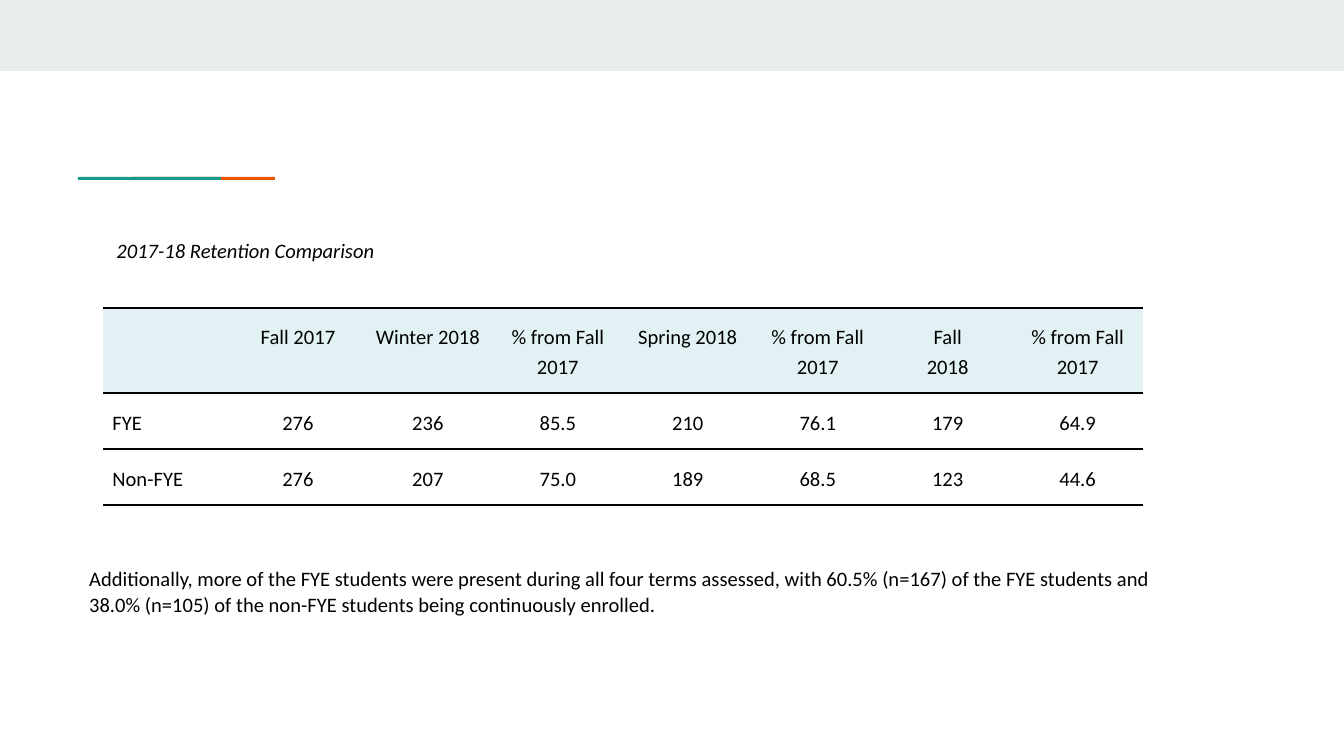
from dataclasses import dataclass

from lxml.etree import SubElement
from pptx import Presentation
from pptx.dml.color import RGBColor
from pptx.enum.shapes import MSO_SHAPE
from pptx.enum.text import MSO_ANCHOR, MSO_AUTO_SIZE, PP_ALIGN
from pptx.oxml import parse_xml
from pptx.oxml.ns import nsdecls, qn
from pptx.util import Inches, Pt

SLIDE_WIDTH, SLIDE_HEIGHT = 1344, 756
EMU_PER_PX = Inches(10) / SLIDE_WIDTH
TITLE_ONLY = 5

HEADERS = ["", "Fall 2017", "Winter 2018", "% from Fall 2017", "Spring 2018",
           "% from Fall 2017", "Fall\n2018", "% from Fall 2017"]
RETENTION = [
    ["FYE", "276", "236", "85.5", "210", "76.1", "179", "64.9"],
    ["Non-FYE", "276", "207", "75.0", "189", "68.5", "123", "44.6"],
]
SUMMARY = ("Additionally, more of the FYE students were present during all four terms "
           "assessed, with 60.5% (n=167) of the FYE students and 38.0% (n=105) of the "
           "non-FYE students being continuously enrolled.")


@dataclass(frozen=True)
class Theme:
    """Colours, font and type sizes of the slide."""

    text: str = "000000"
    band: str = "E9EDEE"
    orange: str = "EB5600"
    green: str = "1A9988"
    header: str = "E2F1F4"
    font: str = "Calibri"
    size: int = 11
    rule: int = 1


def px(length):
    """Turn pixels into EMU."""
    return round(length * EMU_PER_PX)


class SlideBuilder:
    """Draws themed elements on one slide."""

    def __init__(self, slide, theme):
        """Keep the slide and its theme."""
        self.slide = slide
        self.theme = theme

    def style_text(self, text_frame, spacing, after=0, align=PP_ALIGN.LEFT, italic=False):
        """Format every paragraph of a text frame."""
        for paragraph in text_frame.paragraphs:
            paragraph.alignment = align
            paragraph.line_spacing = spacing
            paragraph.space_after = Pt(after)
            for font in [paragraph.font] + [run.font for run in paragraph.runs]:
                font.name = self.theme.font
                font.size = Pt(self.theme.size)
                font.italic = italic
                font.color.rgb = RGBColor.from_string(self.theme.text)

    def fill_frame(self, shape, text, anchor, spacing, italic=False):
        """Put wrapped text with even insets into a shape."""
        text_frame = shape.text_frame
        text_frame.text = text
        text_frame.word_wrap = True
        text_frame.auto_size = MSO_AUTO_SIZE.NONE
        text_frame.vertical_anchor = anchor
        text_frame.margin_left = text_frame.margin_right = Inches(0.1)
        text_frame.margin_top = text_frame.margin_bottom = Inches(0.1)
        self.style_text(text_frame, spacing, after=8, italic=italic)

    def title(self, text, left, top, width, height):
        """Place the title placeholder."""
        shape = self.slide.shapes.title
        shape.left, shape.top = px(left), px(top)
        shape.width, shape.height = px(width), px(height)
        self.fill_frame(shape, text, MSO_ANCHOR.MIDDLE, 1.15, italic=True)

    def text(self, text, left, top, width, height):
        """Add a body text box."""
        shape = self.slide.shapes.add_textbox(px(left), px(top), px(width), px(height))
        self.fill_frame(shape, text, MSO_ANCHOR.TOP, 1.07)

    def bar(self, color, left, top, width, height):
        """Add a plain filled rectangle."""
        shape = self.slide.shapes.add_shape(
            MSO_SHAPE.RECTANGLE, px(left), px(top), px(width), px(height))
        shape.shadow.inherit = False
        shape.fill.solid()
        shape.fill.fore_color.rgb = RGBColor.from_string(color)
        shape.line.fill.background()

    def cell_borders(self, cell):
        """Rule a cell above and below and leave its sides open."""
        properties = cell._tc.get_or_add_tcPr()
        for index, side in enumerate(("lnL", "lnR", "lnT", "lnB")):
            line = parse_xml(f'<a:{side} {nsdecls("a")} w="{Pt(self.theme.rule)}"/>')
            if side in ("lnL", "lnR"):
                SubElement(line, qn("a:noFill"))
            else:
                fill = SubElement(line, qn("a:solidFill"))
                SubElement(fill, qn("a:srgbClr"), val=self.theme.text)
            properties.insert(index, line)

    def table(self, rows, left, top, column_width, row_heights):
        """Add a ruled table with a tinted header row."""
        columns = len(rows[0])
        table = self.slide.shapes.add_table(
            len(rows), columns, px(left), px(top),
            px(column_width * columns), px(sum(row_heights))).table
        table.horz_banding = False
        for column in table.columns:
            column.width = px(column_width)
        for row_index, values in enumerate(rows):
            table.rows[row_index].height = px(row_heights[row_index])
            for column_index, value in enumerate(values):
                cell = table.cell(row_index, column_index)
                cell.text_frame.text = value
                cell.margin_left = cell.margin_right = Inches(0.07)
                cell.margin_top = cell.margin_bottom = Inches(0.1)
                align = PP_ALIGN.CENTER if column_index else PP_ALIGN.LEFT
                self.style_text(cell.text_frame, 1.15, align=align)
                for paragraph in cell.text_frame.paragraphs:
                    for run in paragraph.runs:
                        run.font.bold = False
                if row_index:
                    cell.fill.background()
                else:
                    cell.fill.solid()
                    cell.fill.fore_color.rgb = RGBColor.from_string(self.theme.header)
                self.cell_borders(cell)


def main():
    """Build and save the slide."""
    presentation = Presentation()
    presentation.slide_width = px(SLIDE_WIDTH)
    presentation.slide_height = px(SLIDE_HEIGHT)
    slide = presentation.slides.add_slide(presentation.slide_layouts[TITLE_ONLY])
    theme = Theme()
    builder = SlideBuilder(slide, theme)
    builder.bar(theme.band, 0, 0, SLIDE_WIDTH, 71)
    builder.bar(theme.orange, 133, 177, 142, 3)
    builder.bar(theme.green, 78, 177, 143, 3)
    builder.title("2017-18 Retention Comparison", 103, 212, 812, 73)
    builder.table([HEADERS] + RETENTION, 103, 308, 130, [85, 56, 56])
    builder.text(SUMMARY, 76, 551, 1108, 129)
    presentation.save("out.pptx")


if __name__ == "__main__":
    main()
